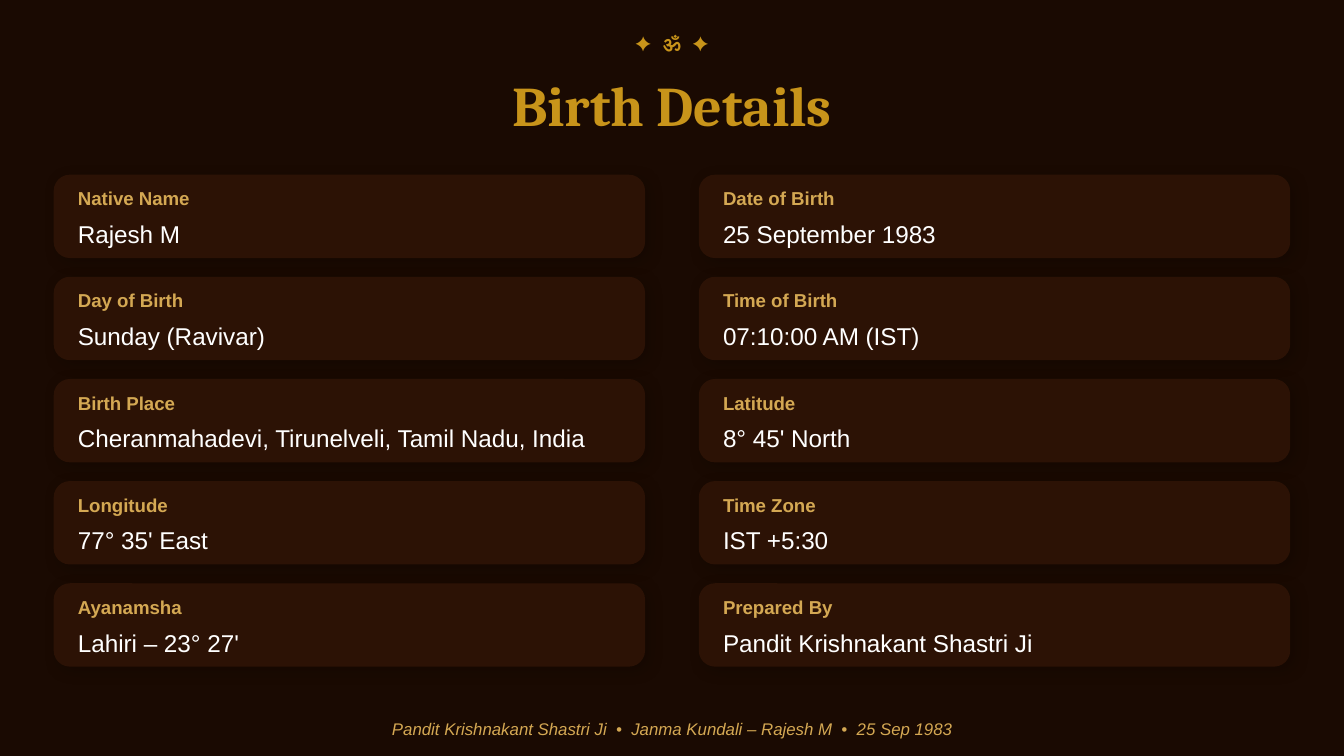
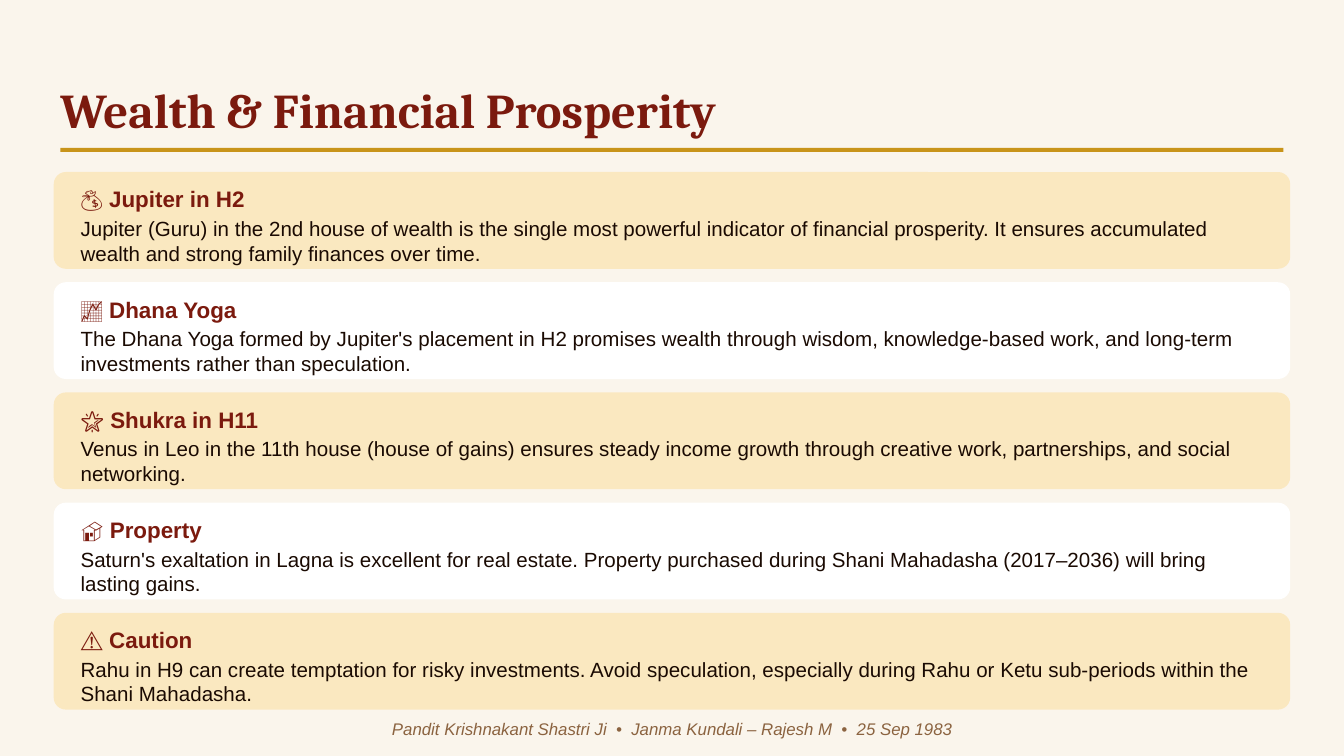
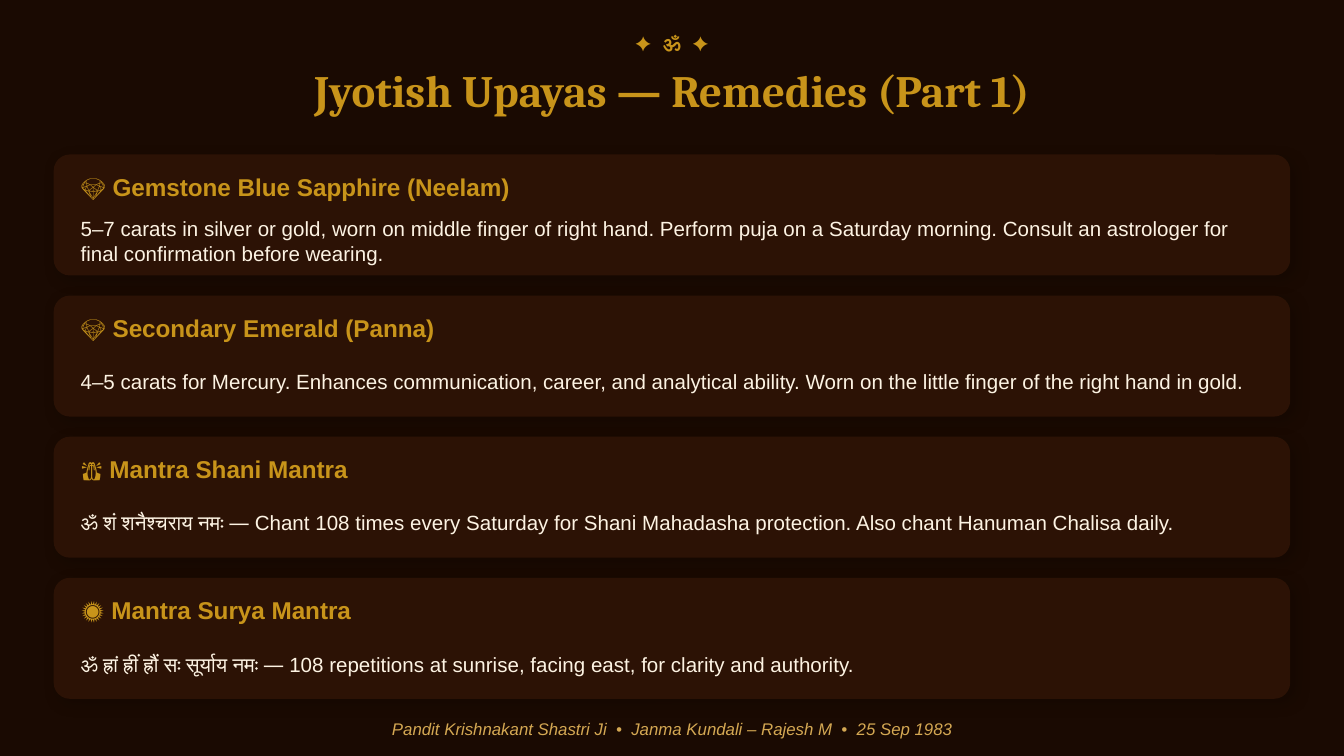
from dataclasses import dataclass

from pptx import Presentation
from pptx.dml.color import RGBColor
from pptx.enum.shapes import MSO_SHAPE
from pptx.enum.text import MSO_ANCHOR, PP_ALIGN
from pptx.oxml import parse_xml
from pptx.oxml.ns import nsdecls, qn
from pptx.util import Pt


@dataclass(frozen=True)
class Theme:
    # Colours
    night: str = "1A0A02"
    panel: str = "2C1205"
    paper: str = "FAF5EC"
    gold: str = "C8941A"
    sand: str = "D4A853"
    honey: str = "FAE8C0"
    maroon: str = "7B1A0E"
    brown: str = "8B6340"
    cream: str = "FDF3E3"
    white: str = "FFFFFF"
    # Fonts and type sizes
    heading: str = "Cambria"
    body: str = "Arial"
    title_large: int = 30
    title_medium: int = 26
    title_small: int = 24
    value: int = 13
    card_head: int = 12
    text: int = 11
    label: int = 10
    footer: int = 9


t = Theme()
WIDTH, HEIGHT = 720, 405
MARGIN = 28.8
CARD_W = WIDTH - 2 * MARGIN
TEXT_X, TEXT_W = 43.2, 633.6


def add_text(slide, text, x, y, w, h, *, size, color, font=t.body, bold=False,
             italic=False, align=PP_ALIGN.LEFT, inset=(0, 0)):
    tf = slide.shapes.add_textbox(Pt(x), Pt(y), Pt(w), Pt(h)).text_frame
    tf.word_wrap = True
    tf.vertical_anchor = MSO_ANCHOR.MIDDLE
    tf.margin_left = tf.margin_right = Pt(inset[0])
    tf.margin_top = tf.margin_bottom = Pt(inset[1])
    p = tf.paragraphs[0]
    p.alignment = align
    r = p.add_run()
    r.text = text
    r.font.name, r.font.size = font, Pt(size)
    r.font.bold, r.font.italic = bold, italic
    r.font.color.rgb = RGBColor.from_string(color)


def add_block(slide, x, y, w, h, fill, radius=0, shadow=False):
    kind = MSO_SHAPE.ROUNDED_RECTANGLE if radius else MSO_SHAPE.RECTANGLE
    sp = slide.shapes.add_shape(kind, Pt(x), Pt(y), Pt(w), Pt(h))
    sp.fill.solid()
    sp.fill.fore_color.rgb = RGBColor.from_string(fill)
    sp.line.fill.background()
    sp.shadow.inherit = False
    if radius:
        sp.adjustments[0] = radius / h
    if shadow:
        sp._element.spPr.find(qn("a:effectLst")).append(parse_xml(
            f'<a:outerShdw {nsdecls("a")} blurRad="{Pt(8)}" dist="{Pt(3)}" '
            'dir="2700000" algn="bl" rotWithShape="0"><a:srgbClr val="000000">'
            '<a:alpha val="18000"/></a:srgbClr></a:outerShdw>'))


prs = Presentation()
prs.slide_width, prs.slide_height = Pt(WIDTH), Pt(HEIGHT)
centred = dict(align=PP_ALIGN.CENTER, inset=(7.2, 3.6))
title = dict(font=t.heading, bold=True)

# Backgrounds, ornaments and footers
slides = []
for dark in (True, False, True):
    s = prs.slides.add_slide(prs.slide_layouts[6])
    s.background.fill.solid()
    s.background.fill.fore_color.rgb = RGBColor.from_string(t.night if dark else t.paper)
    if dark:
        add_text(s, "✦  ॐ  ✦", 0, 12.96, WIDTH, 20.16, size=t.text,
                 color=t.gold, bold=True, **centred)
    add_text(s, "Pandit Krishnakant Shastri Ji  •  Janma Kundali – Rajesh M  •  25 Sep 1983",
             0, 380.16, WIDTH, 20.16, size=t.footer,
             color=t.sand if dark else t.brown, italic=True, **centred)
    slides.append(s)
birth, wealth, remedies = slides

# Birth details: two columns of label and value
add_text(birth, "Birth Details", 36, 36, 648, 39.6, size=t.title_large,
         color=t.gold, **title, **centred)
details = [
    ("Native Name", "Rajesh M"),
    ("Date of Birth", "25 September 1983"),
    ("Day of Birth", "Sunday (Ravivar)"),
    ("Time of Birth", "07:10:00 AM (IST)"),
    ("Birth Place", "Cheranmahadevi, Tirunelveli, Tamil Nadu, India"),
    ("Latitude", "8° 45' North"),
    ("Longitude", "77° 35' East"),
    ("Time Zone", "IST +5:30"),
    ("Ayanamsha", "Lahiri – 23° 27'"),
    ("Prepared By", "Pandit Krishnakant Shastri Ji"),
]
for i, (label, value) in enumerate(details):
    row, col = divmod(i, 2)
    x, y = MARGIN + col * 345.6, 93.6 + row * 54.72
    add_block(birth, x, y, 316.8, 44.64, t.panel, radius=8.64, shadow=True)
    add_text(birth, label, x + 12.96, y + 3.6, 288, 18, size=t.label, color=t.sand, bold=True)
    add_text(birth, value, x + 12.96, y + 21.6, 288, 20.16, size=t.value, color=t.white)

# Wealth: underlined title and alternating cards
add_text(wealth, "Wealth & Financial Prosperity", 32.4, 39.6, 655.2, 37.44,
         size=t.title_medium, color=t.maroon, **title)
add_block(wealth, 32.4, 79.2, 655.2, 2.16, t.gold)
prospects = [
    ("💰 Jupiter in H2",
     "Jupiter (Guru) in the 2nd house of wealth is the single most powerful indicator of "
     "financial prosperity. It ensures accumulated wealth and strong family finances over time."),
    ("📈 Dhana Yoga",
     "The Dhana Yoga formed by Jupiter's placement in H2 promises wealth through wisdom, "
     "knowledge-based work, and long-term investments rather than speculation."),
    ("🌟 Shukra in H11",
     "Venus in Leo in the 11th house (house of gains) ensures steady income growth through "
     "creative work, partnerships, and social networking."),
    ("🏠 Property",
     "Saturn's exaltation in Lagna is excellent for real estate. Property purchased during "
     "Shani Mahadasha (2017–2036) will bring lasting gains."),
    ("⚠ Caution",
     "Rahu in H9 can create temptation for risky investments. Avoid speculation, especially "
     "during Rahu or Ketu sub-periods within the Shani Mahadasha."),
]
for i, (head, text) in enumerate(prospects):
    y = 92.16 + i * 59.04
    add_block(wealth, MARGIN, y, CARD_W, 51.84, t.white if i % 2 else t.honey, radius=6.48)
    add_text(wealth, head, TEXT_X, y + 4.32, 172.8, 20.16, size=t.card_head,
             color=t.maroon, bold=True)
    add_text(wealth, text, TEXT_X, y + 25.92, TEXT_W, 21.6, size=t.text, color=t.night)

# Remedies: full-width cards
add_text(remedies, "Jyotish Upayas — Remedies (Part 1)", 21.6, 31.68, 676.8, 33.12,
         size=t.title_small, color=t.gold, **title, **centred)
upayas = [
    ("💎 Gemstone Blue Sapphire (Neelam)",
     "5–7 carats in silver or gold, worn on middle finger of right hand. Perform puja on a "
     "Saturday morning. Consult an astrologer for final confirmation before wearing."),
    ("💎 Secondary Emerald (Panna)",
     "4–5 carats for Mercury. Enhances communication, career, and analytical ability. "
     "Worn on the little finger of the right hand in gold."),
    ("🙏 Mantra Shani Mantra",
     "ॐ शं शनैश्चराय नमः — Chant 108 times every Saturday for Shani Mahadasha protection. "
     "Also chant Hanuman Chalisa daily."),
    ("☀ Mantra Surya Mantra",
     "ॐ ह्रां ह्रीं ह्रौं सः सूर्याय नमः — 108 repetitions at sunrise, facing east, "
     "for clarity and authority."),
]
for i, (head, text) in enumerate(upayas):
    y = 82.8 + i * 75.6
    add_block(remedies, MARGIN, y, CARD_W, 64.8, t.panel, radius=8.64, shadow=True)
    add_text(remedies, head, TEXT_X, y + 5.76, TEXT_W, 23.04, size=t.value,
             color=t.gold, bold=True)
    add_text(remedies, text, TEXT_X, y + 31.68, TEXT_W, 28.8, size=t.text, color=t.cream)

prs.save("out.pptx")
